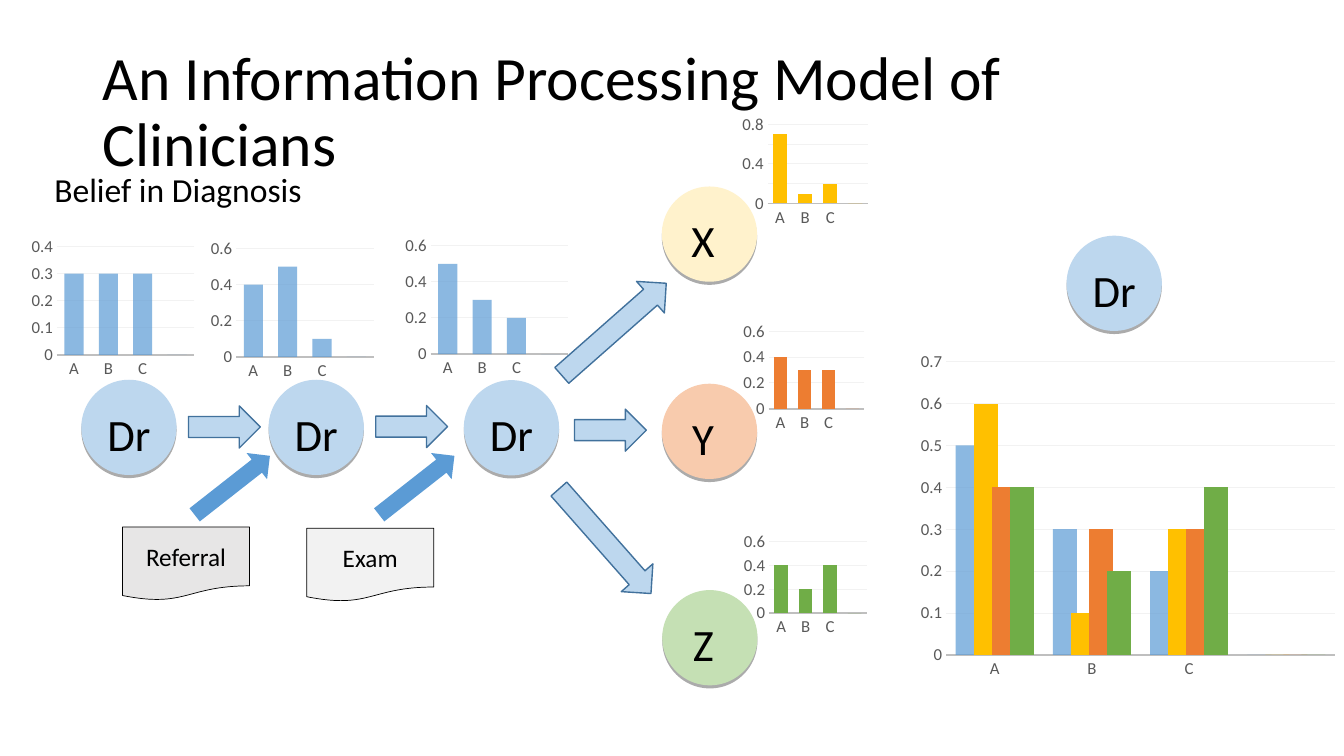
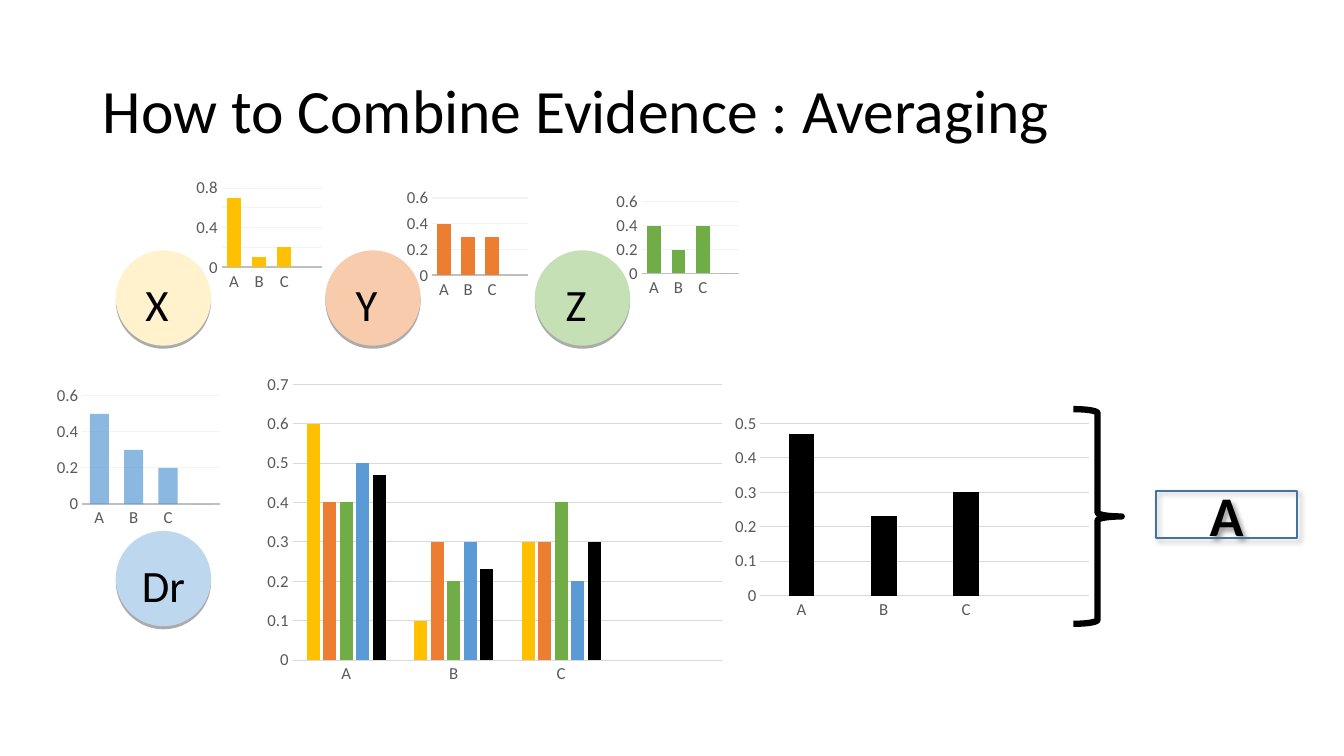
import lxml.etree
import pptx
import pptx.chart.data
import pptx.dml.color
import pptx.enum.chart
import pptx.enum.shapes
import pptx.enum.text
import pptx.oxml.ns
import pptx.util

Cm = pptx.util.Cm
Pt = pptx.util.Pt
qn = pptx.oxml.ns.qn
SHAPES = pptx.enum.shapes.MSO_SHAPE

FONT = "Calibri"
BLACK = "000000"
BLUE, PALE_BLUE, DARK_BLUE = "5B9BD5", "BDD7EE", "41719C"
GOLD, ORANGE, GREEN = "FFC000", "ED7D31", "70AD47"
CATEGORIES = ["A", "B", "C", ""]
CIRCLE_SIZE = 2.4

TITLES = ["An Information Processing Model of Clinicians", "How to Combine Evidence : Averaging"]
TITLE_BOX = (2.34, 1.02, 29.21, 3.68)

FINAL_BELIEF = [0.5, 0.3, 0.2, 0]
DOCTOR_CHART_SIZE = (4.27, 3.73)
DOCTORS = [
    {"circle": (2.05, 9.57), "chart": (0.71, 5.89), "belief": [0.3, 0.3, 0.3, 0], "scale": (0.4, 0.1)},
    {"circle": (6.77, 9.57), "chart": (5.23, 5.94), "belief": [0.4, 0.5, 0.1, 0], "scale": (0.6, 0.2)},
    {"circle": (11.69, 9.58), "chart": (10.13, 5.87), "belief": FINAL_BELIEF, "scale": (0.6, 0.2)},
]
COMBINING_DOCTOR = {"circle": (2.92, 13.38), "chart": (1.35, 9.65), "belief": FINAL_BELIEF, "scale": (0.6, 0.2)}

SPECIALISTS = [
    {"name": "X", "fill": "FFF2CC", "color": GOLD, "belief": [0.7, 0.1, 0.2, 0],
     "scale": (0.8, 0.2), "offset": (1.96, -1.88), "size": (3.3, 2.97)},
    {"name": "Y", "fill": "F8CBAD", "color": ORANGE, "belief": [0.4, 0.3, 0.3, 0],
     "scale": (0.6, 0.2), "offset": (1.99, -1.63), "size": (3.18, 2.92)},
    {"name": "Z", "fill": "C5E0B4", "color": GREEN, "belief": [0.4, 0.2, 0.4, 0],
     "scale": (0.6, 0.2), "offset": (1.99, -1.53), "size": (3.23, 2.77)},
]
SPECIALIST_COLUMN = [(16.68, 4.7), (16.68, 9.67), (16.69, 14.87)]
SPECIALIST_ROW = [(2.92 + 5.28 * column, 6.31) for column in range(3)]

STEP_ARROWS = [
    ((4.75, 10.23, 1.81, 1.06), 0),
    ((9.47, 10.22, 1.81, 1.06), 0),
    ((14.48, 10.31, 1.81, 1.06), 0),
    ((13.72, 7.77, 3.51, 1.06), 318.6),
    ((13.49, 13.11, 3.51, 1.06), 48.6),
]
EVIDENCE = [
    ("Referral", (3.09, 13.28, 3.2, 1.85), "E7E6E6", (4.65, 11.81, 2.41, 0.84)),
    ("Exam", (7.73, 13.31, 3.2, 1.85), "F2F2F2", (9.3, 11.81, 2.41, 0.84)),
]

OPINIONS = [
    (GOLD, [0.6, 0.1, 0.3]),
    (ORANGE, [0.4, 0.3, 0.3]),
    (GREEN, [0.4, 0.2, 0.4]),
]
AVERAGE = (BLACK, [0.47, 0.23, 0.3])

PLAIN_STYLE = {"gap": 80, "overlap": 25, "axis": "BFBFBF", "axis_width": 1.25, "grid": "F2F2F2"}
COMBINED_STYLE = {"gap": 219, "overlap": -27, "axis": "D9D9D9", "axis_width": 0.75, "grid": "D9D9D9"}


def rgb(color):
    return pptx.dml.color.RGBColor.from_string(color)


def place(box):
    return [Cm(length) for length in box]


def set_line(line, color, width):
    line.color.rgb = rgb(color)
    line.width = Pt(width)


def add_alpha(color_element, percent):
    lxml.etree.SubElement(color_element, qn("a:alpha"), val=str(percent * 1000))


def add_shadow(shape, percent, blur, distance, degrees):
    effects = shape.element.spPr.find(qn("a:effectLst"))
    shadow = lxml.etree.SubElement(
        effects, qn("a:outerShdw"), blurRad=str(Pt(blur)), dist=str(Pt(distance)),
        dir=str(degrees * 60000), algn="t", rotWithShape="0")
    add_alpha(lxml.etree.SubElement(shadow, qn("a:srgbClr"), val=BLACK), percent)


def write_text(shape, text, size, centered=False, bold=False):
    frame = shape.text_frame
    frame.vertical_anchor = pptx.enum.text.MSO_ANCHOR.MIDDLE
    frame.text = text
    paragraph = frame.paragraphs[0]
    if centered:
        paragraph.alignment = pptx.enum.text.PP_ALIGN.CENTER
    font = paragraph.font
    font.name, font.size, font.bold = FONT, Pt(size), bold
    font.color.rgb = rgb(BLACK)
    return paragraph


def add_shape(slide, kind, box, fill=None, line=None, rotation=0):
    shape = slide.shapes.add_shape(kind, *place(box))
    shape.shadow.inherit = False
    shape.rotation = rotation
    if fill:
        shape.fill.solid()
        shape.fill.fore_color.rgb = rgb(fill)
    else:
        shape.fill.background()
    if line:
        set_line(shape.line, *line)
    else:
        shape.line.fill.background()
    return shape


def add_title(slide, text):
    title = slide.shapes.add_textbox(*place(TITLE_BOX))
    title.text_frame.word_wrap = True
    write_text(title, text, 44).line_spacing = 0.9


def add_circle(slide, position, label, fill):
    circle = add_shape(slide, SHAPES.OVAL, (*position, CIRCLE_SIZE, CIRCLE_SIZE), fill)
    add_shadow(circle, 32, 0, 2.2, 90)
    write_text(circle, label, 32, centered=True)
    frame = circle.text_frame
    frame.word_wrap = False
    frame.margin_left = frame.margin_bottom = 0
    frame.margin_top = Cm(0.3)
    frame.margin_right = Cm(0.32 if len(label) == 1 else 0)


def add_column_chart(slide, box, series_list, scale, style=PLAIN_STYLE, alpha_color=None):
    data = pptx.chart.data.CategoryChartData()
    data.categories = CATEGORIES
    for number, (_, values) in enumerate(series_list, 1):
        data.add_series(f"Series {number}", (values + [None])[:len(CATEGORIES)])
    chart = slide.shapes.add_chart(
        pptx.enum.chart.XL_CHART_TYPE.COLUMN_CLUSTERED, *place(box), data).chart
    chart.has_title = chart.has_legend = False
    chart.font.name, chart.font.size = FONT, Pt(12)
    chart.font.color.rgb = rgb("595959")
    background = lxml.etree.Element(qn("c:spPr"))
    lxml.etree.SubElement(background, qn("a:noFill"))
    lxml.etree.SubElement(lxml.etree.SubElement(background, qn("a:ln")), qn("a:noFill"))
    chart.element.find(qn("c:txPr")).addprevious(background)

    plot = chart.plots[0]
    plot.vary_by_categories = False
    plot.gap_width, plot.overlap = style["gap"], style["overlap"]
    for series, (color, _) in zip(plot.series, series_list):
        series.format.fill.solid()
        series.format.fill.fore_color.rgb = rgb(color)
        if color == alpha_color:
            add_alpha(next(series.format.fill._xPr.iter(qn("a:srgbClr"))), 70)

    for axis in (chart.category_axis, chart.value_axis):
        axis.major_tick_mark = axis.minor_tick_mark = pptx.enum.chart.XL_TICK_MARK.NONE
    set_line(chart.category_axis.format.line, style["axis"], style["axis_width"])
    values_axis = chart.value_axis
    values_axis.minimum_scale = 0
    values_axis.maximum_scale, values_axis.major_unit = scale
    values_axis.tick_labels.number_format = "General"
    values_axis.tick_labels.number_format_is_linked = False
    values_axis.format.line.fill.background()
    set_line(values_axis.major_gridlines.format.line, style["grid"], 0.75)


def add_doctor(slide, doctor):
    add_circle(slide, doctor["circle"], "Dr", PALE_BLUE)
    add_column_chart(slide, (*doctor["chart"], *DOCTOR_CHART_SIZE), [(BLUE, doctor["belief"])],
                     doctor["scale"], alpha_color=BLUE)


def add_specialists(slide, positions):
    for specialist, (left, top) in zip(SPECIALISTS, positions):
        add_circle(slide, (left, top), specialist["name"], specialist["fill"])
        right_shift, down_shift = specialist["offset"]
        add_column_chart(slide, (left + right_shift, top + down_shift, *specialist["size"]),
                         [(specialist["color"], specialist["belief"])], specialist["scale"])


def build_model(slide):
    caption = slide.shapes.add_textbox(*place((1.12, 4.14, 6.81, 1.27)))
    caption.text_frame.word_wrap = False
    write_text(caption, "Belief in Diagnosis", 24)
    for doctor in DOCTORS:
        add_doctor(slide, doctor)
    for label, box, fill, arrow_box in EVIDENCE:
        document = add_shape(slide, SHAPES.FLOWCHART_DOCUMENT, box, fill, (BLACK, 0.5))
        write_text(document, label, 18, centered=True)
        add_shape(slide, SHAPES.RIGHT_ARROW, arrow_box, BLUE, rotation=321.9)
    add_specialists(slide, SPECIALIST_COLUMN)
    for box, rotation in STEP_ARROWS:
        add_shape(slide, SHAPES.RIGHT_ARROW, box, PALE_BLUE, (DARK_BLUE, 1), rotation)
    add_column_chart(slide, (22.99, 8.69, 10.87, 8.59), [(BLUE, FINAL_BELIEF)] + [
        (color, values + [0]) for color, values in OPINIONS], (0.7, 0.1), alpha_color=BLUE)
    add_circle(slide, (26.88, 5.94), "Dr", PALE_BLUE)


def build_averaging(slide):
    add_doctor(slide, COMBINING_DOCTOR)
    brace = add_shape(slide, SHAPES.RIGHT_BRACE, (27.05, 10.31, 1.22, 5.41), line=(BLACK, 4.5))
    brace.adjustments[0], brace.adjustments[1] = 0.08, 0.5
    answer = add_shape(slide, SHAPES.RECTANGLE, (29.13, 12.37, 3.56, 1.19), line=("43739E", 1))
    add_shadow(answer, 40, 4, 3, 45)
    write_text(answer, "A", 40, centered=True, bold=True)
    add_column_chart(slide, (6.5, 9.27, 11.94, 8.13),
                     OPINIONS + [(BLUE, FINAL_BELIEF[:3]), AVERAGE], (0.7, 0.1), COMBINED_STYLE)
    add_column_chart(slide, (18.34, 10.31, 9.3, 5.41), [AVERAGE], (0.5, 0.1), COMBINED_STYLE)
    add_specialists(slide, SPECIALIST_ROW)


def main():
    presentation = pptx.Presentation()
    presentation.slide_width, presentation.slide_height = Cm(33.87), Cm(19.05)
    for title, build in zip(TITLES, (build_model, build_averaging)):
        slide = presentation.slides.add_slide(presentation.slide_layouts[6])
        add_title(slide, title)
        build(slide)
    presentation.save("out.pptx")


if __name__ == "__main__":
    main()
